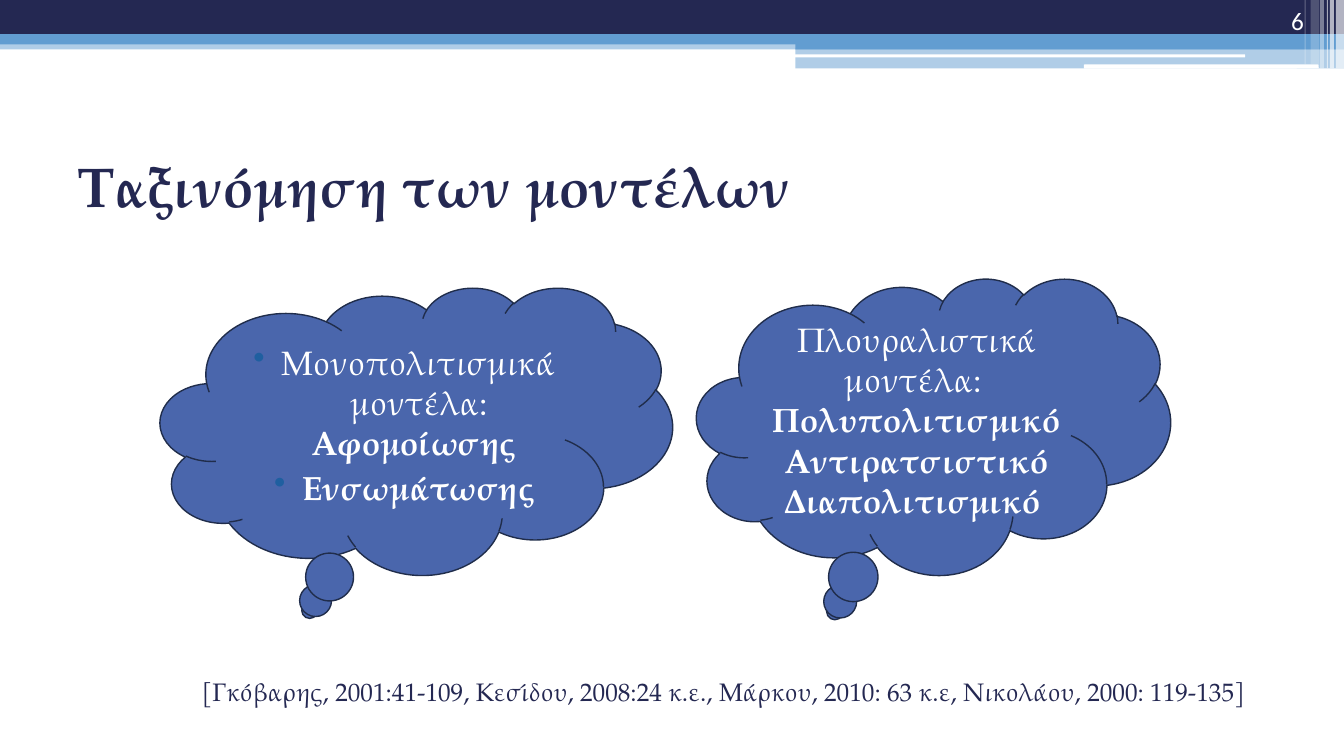
import pptx
import pptx.dml.color
import pptx.enum.shapes
import pptx.enum.text
import pptx.oxml
import pptx.oxml.ns
import pptx.util
from pptx.util import Inches

SERIF = "TeX Gyre Pagella"
NAVY, SKY, WHITE = "242852", "629DD1", "FFFFFF"
CLOUD_FILL, CLOUD_LINE, BULLET = "4A66AC", "202D4B", "1F5FA0"
SHAPE = pptx.enum.shapes.MSO_SHAPE
ALIGN = pptx.enum.text.PP_ALIGN
ANCHOR = pptx.enum.text.MSO_ANCHOR

BANDS = [
    (0, 0.4, 13.33, 0.09, SKY, 50),
    (0, 0, 13.33, 0.34, NAVY, 100),
    (0, 0.34, 13.33, 0.1, SKY, 100),
    (7.89, 0.39, 5.44, 0.1, SKY, 100),
    (7.89, 0.48, 5.44, 0.2, SKY, 50),
]
SLOTS = [(7.88, 0.54, 4.47, 0.03), (10.75, 0.64, 2.33, 0.04)]
STRIPES = [
    (13.25, 0.08, 0.68, 65),
    (13.19, 0.04, 0.68, 65),
    (13.16, 0.01, 0.68, 60),
    (13.09, 0.04, 0.68, 40),
    (13, 0.08, 0.64, 20),
    (12.94, 0.01, 0.64, 30),
]
MONOCULTURAL = [
    [("Μονοπολιτισμικά μοντέλα: ", False), ("Αφομοίωσης ", True)],
    [("Ενσωμάτωσης", True)],
]
PLURALIST = [
    [("Πλουραλιστικά μοντέλα: ", False)],
    [("Πολυπολιτισμικό ", True)],
    [("Αντιρατσιστικό", True)],
    [("Διαπολιτισμικό ", True)],
]
SOURCES = ("[Γκόβαρης, 2001:41-109, Κεσίδου, 2008:24 κ.ε., Μάρκου, 2010: 63 κ.ε, "
           "Νικολάου, 2000: 119-135]")


def color(hex_value):
    return pptx.dml.color.RGBColor.from_string(hex_value)


def add_filled(slide, kind, box, fill, opacity=100):
    shape = slide.shapes.add_shape(kind, *map(Inches, box))
    shape.shadow.inherit = False
    shape.fill.solid()
    shape.fill.fore_color.rgb = color(fill)
    shape.line.fill.background()
    if opacity < 100:
        fill_color = shape.fill._xPr.find(".//" + pptx.oxml.ns.qn("a:srgbClr"))
        fill_color.append(pptx.oxml.parse_xml(
            f'<a:alpha {pptx.oxml.ns.nsdecls("a")} val="{opacity * 1000}"/>'))
    return shape


def write(shape, paragraphs, size, text_color, font=SERIF, align=ALIGN.CENTER, anchor=ANCHOR.MIDDLE):
    frame = shape.text_frame
    frame.word_wrap = True
    frame.vertical_anchor = anchor
    for index, runs in enumerate(paragraphs):
        paragraph = frame.add_paragraph() if index else frame.paragraphs[0]
        paragraph.alignment = align
        for text, bold in runs:
            run = paragraph.add_run()
            run.text = text
            run.font.name = font
            run.font.size = pptx.util.Pt(size)
            run.font.bold = bold
            run.font.color.rgb = color(text_color)


def add_text(slide, box, text, size, text_color, bold=False, **layout):
    shape = slide.shapes.add_textbox(*map(Inches, box))
    write(shape, [[(text, bold)]], size, text_color, **layout)


def add_cloud(slide, box, paragraphs):
    cloud = add_filled(slide, SHAPE.CLOUD_CALLOUT, box, CLOUD_FILL)
    cloud.line.color.rgb = color(CLOUD_LINE)
    cloud.line.width = pptx.util.Pt(1)
    write(cloud, paragraphs, 24, WHITE)
    return cloud


def add_bullets(shape):
    namespace = pptx.oxml.ns.nsdecls("a")
    for paragraph in shape.text_frame.paragraphs:
        paragraph.space_before = pptx.util.Pt(3)
        properties = paragraph._p.get_or_add_pPr()
        properties.set("marL", str(Inches(0.4)))
        properties.set("indent", str(Inches(-0.28)))
        properties.append(pptx.oxml.parse_xml(
            f'<a:buClr {namespace}><a:srgbClr val="{BULLET}"/></a:buClr>'))
        properties.append(pptx.oxml.parse_xml(f'<a:buChar {namespace} char="•"/>'))


def add_header(slide):
    for *box, fill, opacity in BANDS:
        add_filled(slide, SHAPE.RECTANGLE, box, fill, opacity)
    for box in SLOTS:
        add_filled(slide, SHAPE.ROUNDED_RECTANGLE, box, WHITE)
    for left, width, height, opacity in STRIPES:
        add_filled(slide, SHAPE.RECTANGLE, (left, 0, width, height), WHITE, opacity)


def main():
    presentation = pptx.Presentation()
    presentation.slide_width = Inches(13.33)
    presentation.slide_height = Inches(7.5)
    slide = presentation.slides.add_slide(presentation.slide_layouts[6])
    add_header(slide)
    add_text(slide, (0.67, 1.25, 12, 1.17), "Ταξινόμηση των μοντέλων", 40, NAVY,
             bold=True, align=ALIGN.LEFT)
    add_text(slide, (11.92, 0, 1.11, 0.4), "6", 18, WHITE,
             font="Calibri", align=ALIGN.RIGHT, anchor=ANCHOR.BOTTOM)
    add_bullets(add_cloud(slide, (1.59, 2.85, 5.08, 2.85), MONOCULTURAL))
    add_cloud(slide, (6.91, 2.76, 4.7, 2.94), PLURALIST)
    add_text(slide, (1.59, 6.66, 11.17, 0.4), SOURCES, 18, NAVY, anchor=ANCHOR.TOP)
    presentation.save("out.pptx")


if __name__ == "__main__":
    main()
